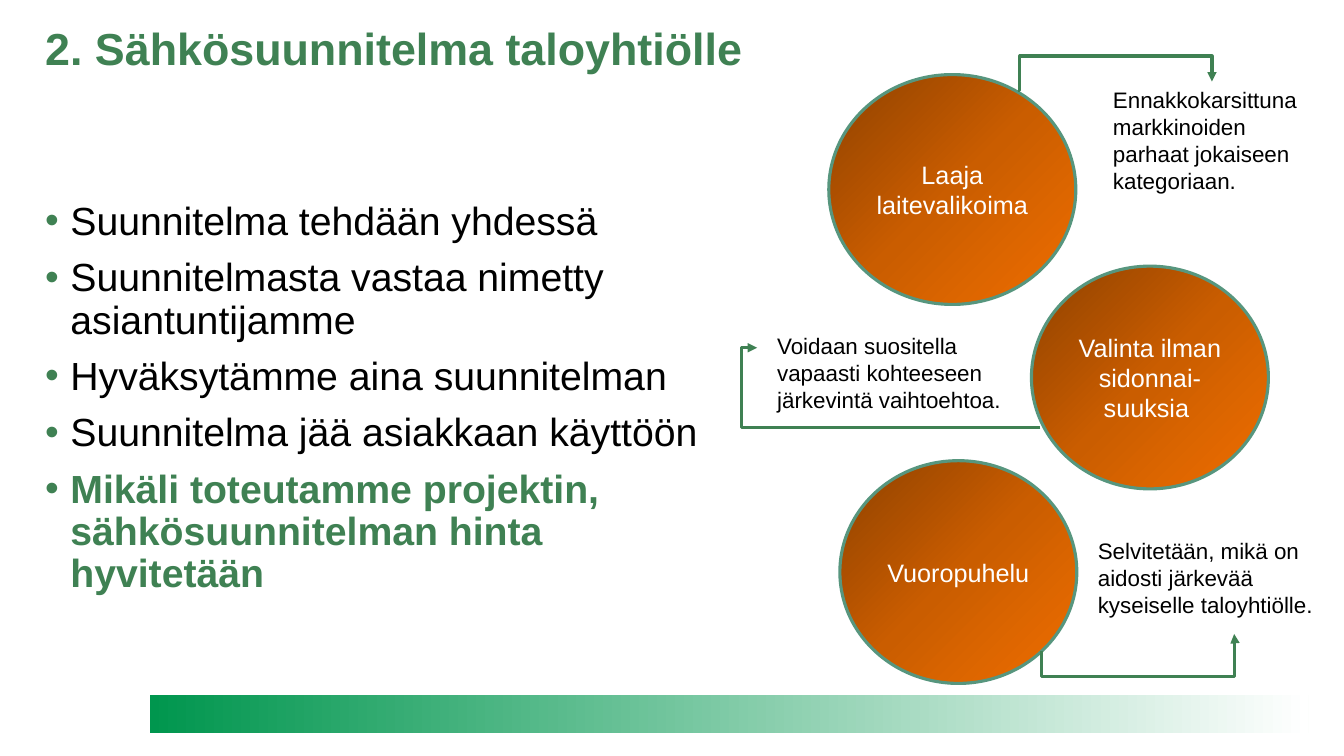
from lxml import etree
from pptx import Presentation
from pptx.dml.color import RGBColor
from pptx.enum.shapes import MSO_CONNECTOR, MSO_SHAPE
from pptx.enum.text import MSO_ANCHOR, PP_ALIGN
from pptx.oxml.ns import qn
from pptx.util import Inches, Pt

ELBOW = MSO_CONNECTOR.ELBOW
OVAL, RECTANGLE = MSO_SHAPE.OVAL, MSO_SHAPE.RECTANGLE
TOP, MIDDLE = MSO_ANCHOR.TOP, MSO_ANCHOR.MIDDLE
LEFT, CENTER = PP_ALIGN.LEFT, PP_ALIGN.CENTER

FONT = "Arial"
GREEN = RGBColor(0x3F, 0x81, 0x53)
TEAL = RGBColor(0x57, 0x96, 0x7E)
BLACK = RGBColor(0x00, 0x00, 0x00)
WHITE = RGBColor(0xFF, 0xFF, 0xFF)
BAR_GREEN = RGBColor(0x00, 0x96, 0x4E)
DARK_ORANGE = RGBColor(0x8E, 0x41, 0x00)
ORANGE = RGBColor(0xCA, 0x5D, 0x00)
LIGHT_ORANGE = RGBColor(0xF0, 0x6E, 0x00)

TITLE = "2. Sähkösuunnitelma taloyhtiölle"
TITLE_BOX = (0.35, 0.17, 12.62, 1.15)
BULLETS = [
    ("Suunnitelma tehdään yhdessä", False),
    ("Suunnitelmasta vastaa nimetty asiantuntijamme", False),
    ("Hyväksytämme aina suunnitelman", False),
    ("Suunnitelma jää asiakkaan käyttöön", False),
    ("Mikäli toteutamme projektin, sähkösuunnitelman hinta hyvitetään", True),
]
BULLETS_BOX = (0.35, 1.32, 6.92, 5.31)
BAR_BOX = (1.49, 6.89, 11.49, 0.38)
CIRCLES = [
    ("Laaja laitevalikoima", (8.22, 0.74, 2.45, 2.28)),
    ("Valinta ilman sidonnai-suuksia ", (10.23, 2.64, 2.35, 2.21)),
    ("Vuoropuhelu", (8.33, 4.57, 2.35, 2.21)),
]
NOTES = [
    ("Voidaan suositella vapaasti kohteeseen järkevintä vaihtoehtoa.",
     (7.61, 3.25, 2.53, 0.91)),
    ("Ennakkokarsittuna markkinoiden parhaat jokaiseen kategoriaan.",
     (10.94, 0.81, 2.15, 1.18)),
    ("Selvitetään, mikä on aidosti järkevää kyseiselle taloyhtiölle.",
     (10.79, 5.28, 2.41, 0.91)),
]
ARROWS = [
    ("bentConnector4", (10.1, 0.9, 12.02, 0.81), 0, (800, 382200)),
    ("bentConnector3", (10.32, 4.24, 7.51, 3.45), 0, (105500,)),
    ("bentConnector4", (11.37, 7.33, 11.2, 5.42), 90, (-148400, 100400)),
]


def inches(values):
    return [Inches(value) for value in values]


def add_run(paragraph, text, size, color, bold=False):
    run = paragraph.add_run()
    run.text = text
    run.font.name = FONT
    run.font.size = Pt(size)
    run.font.bold = bold
    run.font.color.rgb = color


def add_text_box(slide, box, margin_top=0.05):
    frame = slide.shapes.add_textbox(*inches(box)).text_frame
    frame.word_wrap = True
    frame.vertical_anchor = TOP
    frame.margin_top = Inches(margin_top)
    return frame


def add_gradient_shape(slide, kind, box, colors, angle):
    shape = slide.shapes.add_shape(kind, *inches(box))
    shape.shadow.inherit = False
    shape.fill.gradient()
    shape.fill.gradient_angle = angle
    stops = shape._element.spPr.find(".//" + qn("a:gsLst"))
    for stop in list(stops):
        stops.remove(stop)
    for index, color in enumerate(colors):
        position = 100000 * index // (len(colors) - 1)
        stop = etree.SubElement(stops, qn("a:gs"), pos=str(position))
        etree.SubElement(stop, qn("a:srgbClr"), val=str(color))
    return shape


def add_bullet(paragraph):
    properties = paragraph._p.get_or_add_pPr()
    properties.set("marL", str(Inches(0.25)))
    properties.set("indent", str(-Inches(0.25)))
    bullet_color = etree.SubElement(properties, qn("a:buClr"))
    etree.SubElement(bullet_color, qn("a:srgbClr"), val=str(GREEN))
    etree.SubElement(properties, qn("a:buFont"), typeface=FONT)
    etree.SubElement(properties, qn("a:buChar"), char="•")


def add_arrow(slide, preset, ends, rotation, adjustments):
    connector = slide.shapes.add_connector(ELBOW, *inches(ends))
    connector.line.color.rgb = GREEN
    connector.line.width = Pt(2.25)
    properties = connector._element.spPr
    if rotation:
        properties.find(qn("a:xfrm")).set("rot", str(rotation * 60000))
    geometry = properties.find(qn("a:prstGeom"))
    geometry.set("prst", preset)
    guides = geometry.find(qn("a:avLst"))
    for number, value in enumerate(adjustments, 1):
        etree.SubElement(guides, qn("a:gd"), name=f"adj{number}", fmla=f"val {value}")
    etree.SubElement(properties.find(qn("a:ln")), qn("a:tailEnd"), type="triangle")
    etree.SubElement(properties, qn("a:effectLst"))


def main():
    presentation = Presentation()
    presentation.slide_width = Inches(13.33)
    presentation.slide_height = Inches(7.5)
    slide = presentation.slides.add_slide(presentation.slide_layouts[6])

    bar = add_gradient_shape(slide, RECTANGLE, BAR_BOX, (BAR_GREEN, WHITE), 0)
    bar.line.fill.background()

    title = add_text_box(slide, TITLE_BOX, margin_top=0.1).paragraphs[0]
    title.line_spacing = 0.9
    add_run(title, TITLE, 32, GREEN, True)

    body = add_text_box(slide, BULLETS_BOX, margin_top=0.68)
    for index, (text, highlighted) in enumerate(BULLETS):
        paragraph = body.add_paragraph() if index else body.paragraphs[0]
        add_bullet(paragraph)
        paragraph.line_spacing = 0.9
        paragraph.space_before = Pt(10 if index else 0)
        add_run(paragraph, text, 28, GREEN if highlighted else BLACK, highlighted)

    for text, box in CIRCLES:
        circle = add_gradient_shape(
            slide, OVAL, box, (DARK_ORANGE, ORANGE, LIGHT_ORANGE), 315)
        circle.line.color.rgb = TEAL
        circle.line.width = Pt(2.25)
        frame = circle.text_frame
        frame.word_wrap = True
        frame.vertical_anchor = MIDDLE
        frame.paragraphs[0].alignment = CENTER
        add_run(frame.paragraphs[0], text, 18, WHITE)

    for text, box in NOTES:
        paragraph = add_text_box(slide, box).paragraphs[0]
        paragraph.alignment = LEFT
        add_run(paragraph, text, 16, BLACK)

    for arrow in ARROWS:
        add_arrow(slide, *arrow)

    presentation.save("out.pptx")


if __name__ == "__main__":
    main()
